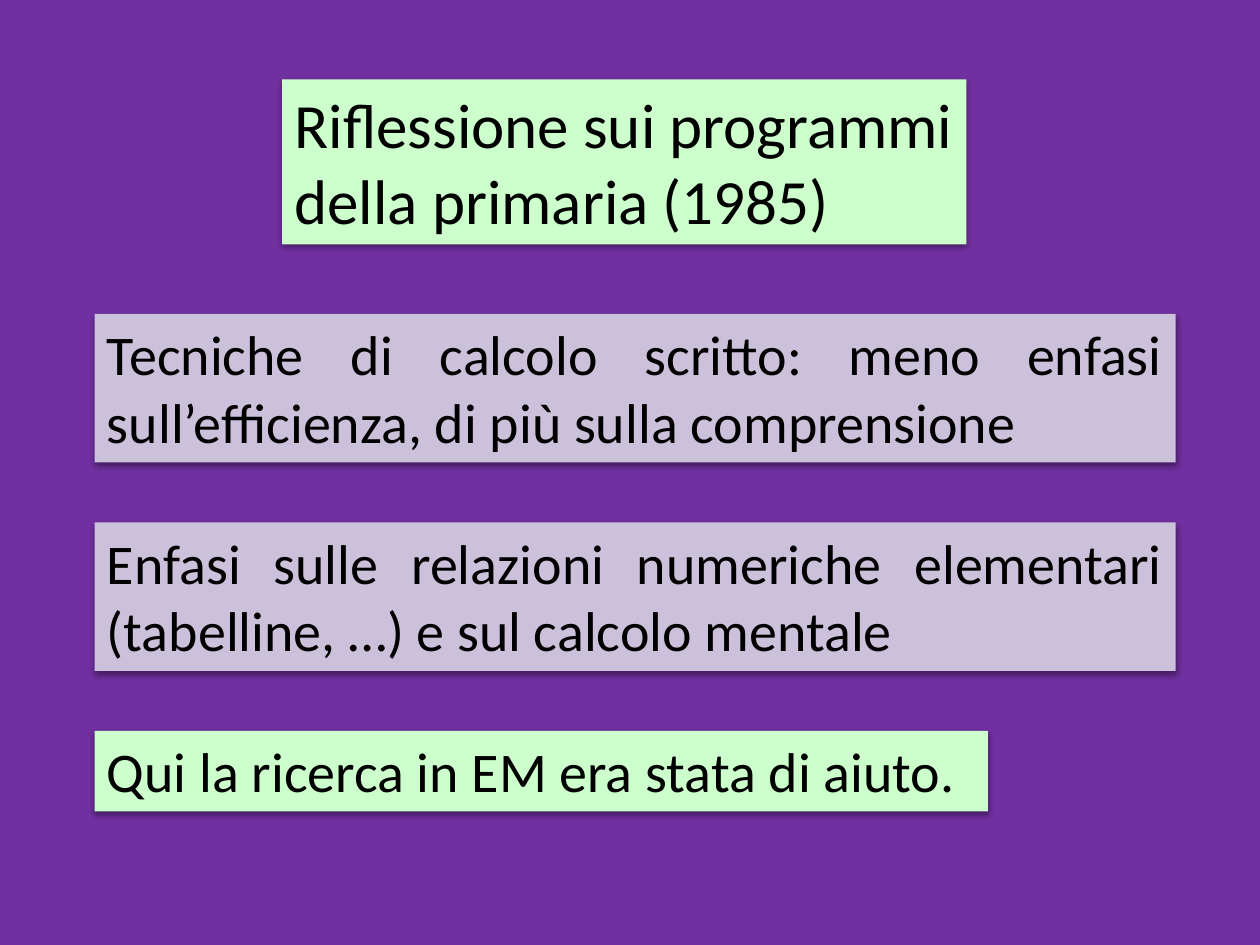
"""Build the slide reflecting on the 1985 primary school programmes."""
from lxml.etree import SubElement
from pptx import Presentation
from pptx.dml.color import RGBColor
from pptx.enum.shapes import MSO_SHAPE
from pptx.enum.text import MSO_ANCHOR, MSO_AUTO_SIZE, PP_ALIGN
from pptx.oxml.ns import qn
from pptx.util import Inches, Pt

PURPLE = RGBColor(0x70, 0x30, 0xA0)
GREEN = RGBColor(0xCC, 0xFF, 0xCC)
LILAC = RGBColor(0xCC, 0xC1, 0xDA)
BLACK = RGBColor(0, 0, 0)

TITLE = "Riflessione sui programmi della primaria (1985)"
POINTS = [
    ("Tecniche di calcolo scritto: meno enfasi sull’efficienza, di più sulla comprensione",
     LILAC, 8.58, 1.18),
    ("Enfasi sulle relazioni numeriche elementari (tabelline, …) e sul calcolo mentale",
     LILAC, 8.58, 1.18),
    ("Qui la ricerca in EM era stata di aiuto.", GREEN, 7.09, 0.64),
]
POINTS_LEFT, POINTS_TOP, ROW_PITCH = 0.75, 2.49, 1.655


def add_soft_shadow(box):
    box.shadow.inherit = False
    effects = box._element.spPr.find(qn("a:effectLst"))
    shadow = SubElement(effects, qn("a:outerShdw"), blurRad=str(Pt(3.15)),
                        dist=str(Pt(1.57)), dir="5400000", rotWithShape="0")
    color = SubElement(shadow, qn("a:srgbClr"), val=str(BLACK))
    SubElement(color, qn("a:alpha"), val="38000")


def add_panel(page, text, fill, place, size, align):
    box = page.shapes.add_shape(MSO_SHAPE.RECTANGLE, *map(Inches, place))
    box.fill.solid()
    box.fill.fore_color.rgb = fill
    box.line.fill.background()
    add_soft_shadow(box)
    frame = box.text_frame
    frame.word_wrap = True
    frame.auto_size = MSO_AUTO_SIZE.SHAPE_TO_FIT_TEXT
    frame.vertical_anchor = MSO_ANCHOR.TOP
    para = frame.paragraphs[0]
    para.alignment = align
    span = para.add_run()
    span.text = text
    span.font.name = "Calibri"
    span.font.size = Pt(size)
    span.font.color.rgb = BLACK


def main():
    deck = Presentation()
    deck.slide_width, deck.slide_height = Inches(10), Inches(7.5)
    page = deck.slides.add_slide(deck.slide_layouts[6])
    page.background.fill.solid()
    page.background.fill.fore_color.rgb = PURPLE

    add_panel(page, TITLE, GREEN, (2.24, 0.63, 5.43, 1.31), 36, PP_ALIGN.LEFT)
    for row, (text, fill, width, height) in enumerate(POINTS):
        place = (POINTS_LEFT, POINTS_TOP + row * ROW_PITCH, width, height)
        add_panel(page, text, fill, place, 32, PP_ALIGN.JUSTIFY)
    deck.save("out.pptx")


if __name__ == "__main__":
    main()
